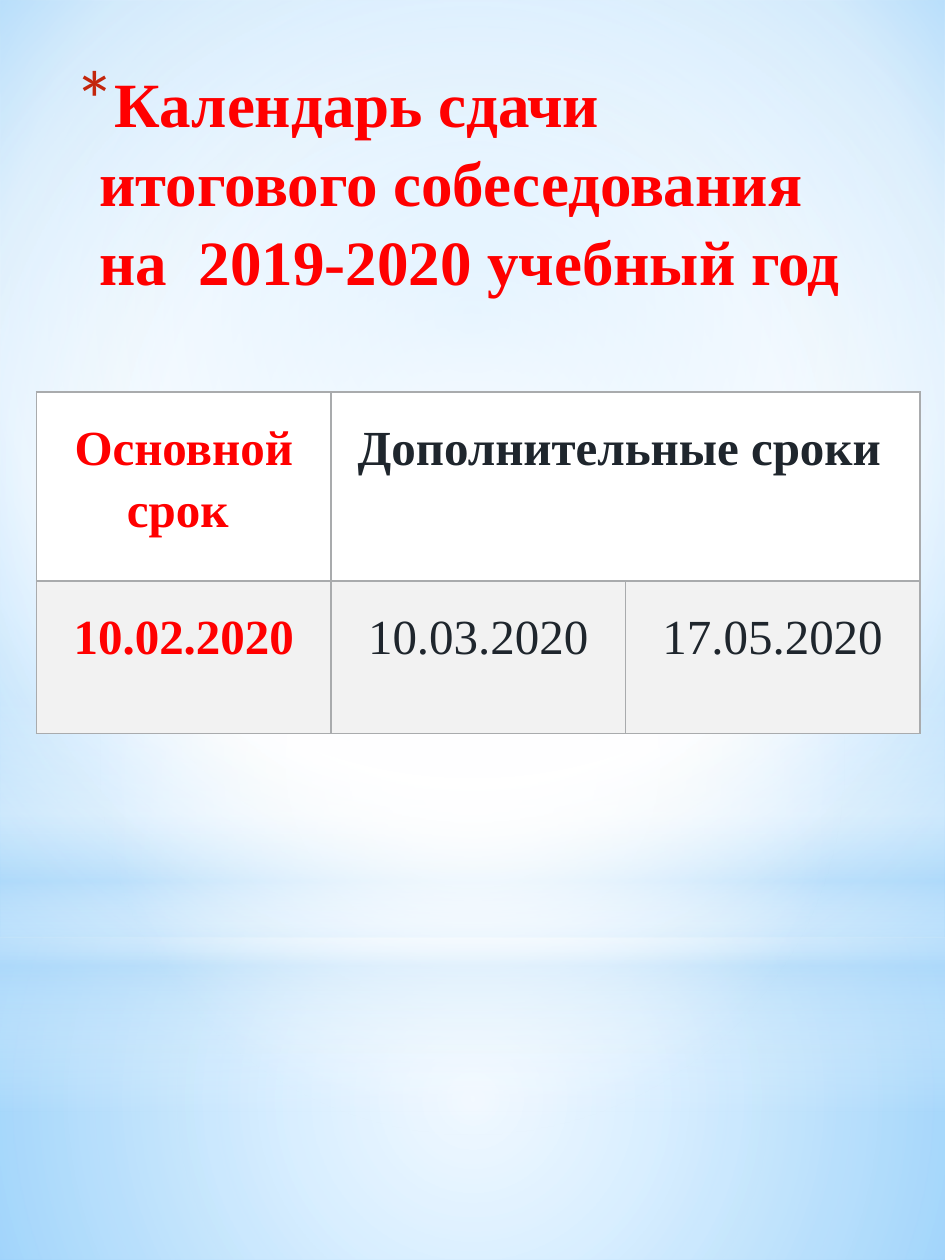
from dataclasses import dataclass

from lxml.etree import SubElement
from pptx import Presentation
from pptx.dml.color import RGBColor
from pptx.enum.shapes import MSO_SHAPE
from pptx.enum.text import PP_ALIGN
from pptx.oxml.ns import qn
from pptx.slide import Slide
from pptx.table import _Cell
from pptx.text.text import _Paragraph
from pptx.util import Inches, Pt

RED = RGBColor(0xFF, 0x00, 0x00)
RUST = RGBColor(0xC3, 0x26, 0x0C)
INK = RGBColor(0x1F, 0x26, 0x2D)
WHITE = RGBColor(0xFF, 0xFF, 0xFF)
PALE = RGBColor(0xF2, 0xF2, 0xF2)
GRAY = RGBColor(0xA9, 0xAB, 0xAD)
SKY = RGBColor(0xB4, 0xDC, 0xFA)
LIGHT = RGBColor(0x9E, 0xD5, 0xFF)
BLUE = RGBColor(0x5B, 0xB9, 0xFF)
FONT = "Times New Roman"
MIDDLE = (50, 50, 50, 50)


@dataclass
class Stop:
    place: int
    color: RGBColor
    alpha: int = 100


@dataclass
class Glow:
    kind: MSO_SHAPE
    top: float
    height: float
    stops: list[Stop]
    focus: tuple | None = MIDDLE


@dataclass
class Entry:
    row: int
    col: int
    text: str
    color: RGBColor
    bold: bool
    fill: RGBColor


GLOWS = [
    Glow(MSO_SHAPE.RECTANGLE, 7.44, 2.56,
         [Stop(0, WHITE, 91), Stop(37, WHITE, 76), Stop(100, SKY, 79)]),
    Glow(MSO_SHAPE.RECTANGLE, 0, 7.44,
         [Stop(0, WHITE, 89), Stop(48, WHITE, 62), Stop(100, SKY, 79)]),
    Glow(MSO_SHAPE.RECTANGLE, 5.49, 3.33,
         [Stop(0, WHITE, 0), Stop(29, WHITE, 30), Stop(45, SKY, 40),
          Stop(55, WHITE, 26), Stop(65, SKY, 60), Stop(100, WHITE, 0)], None),
    Glow(MSO_SHAPE.OVAL, 2.33, 7.44, [Stop(0, WHITE), Stop(56, WHITE, 0)]),
]

ENTRIES = [
    Entry(0, 0, "Основной срок ", RED, True, WHITE),
    Entry(0, 1, "Дополнительные сроки ", INK, True, WHITE),
    Entry(1, 0, "10.02.2020", RED, True, PALE),
    Entry(1, 1, "10.03.2020", INK, False, PALE),
    Entry(1, 2, "17.05.2020", INK, False, PALE),
]


def blend(owner, stops: list[Stop], focus: tuple | None) -> None:
    grad = next(owner.iter(qn("a:gradFill")))
    for child in list(grad):
        grad.remove(child)
    group = SubElement(grad, qn("a:gsLst"))
    for stop in stops:
        item = SubElement(group, qn("a:gs"), pos=str(stop.place * 1000))
        color = SubElement(item, qn("a:srgbClr"), val=str(stop.color))
        if stop.alpha < 100:
            SubElement(color, qn("a:alpha"), val=str(stop.alpha * 1000))
    if focus is None:
        SubElement(grad, qn("a:lin"), ang="5400000", scaled="0")
        return
    shade = SubElement(grad, qn("a:path"), path="circle")
    sides = {side: str(part * 1000) for side, part in zip("ltrb", focus)}
    SubElement(shade, qn("a:fillToRect"), **sides)


def draw_glow(slide: Slide, glow: Glow) -> None:
    shape = slide.shapes.add_shape(glow.kind, 0, Inches(glow.top),
                                   Inches(7.5), Inches(glow.height))
    shape.shadow.inherit = False
    shape.line.fill.background()
    shape.fill.gradient()
    blend(shape.element, glow.stops, glow.focus)


def style(para: _Paragraph, size: int, color: RGBColor, bold: bool) -> None:
    for run in para.runs:
        run.font.name = FONT
        run.font.size = Pt(size)
        run.font.bold = bold
        run.font.color.rgb = color


def draw_title(slide: Slide) -> None:
    box = slide.shapes.add_textbox(Inches(0.44), Inches(0.43),
                                   Inches(6.54), Inches(2.52))
    frame = box.text_frame
    frame.word_wrap = True
    frame.text = "Календарь сдачи итогового собеседования на  2019-2020 учебный год"
    para = frame.paragraphs[0]
    para.line_spacing = 1.05
    para.space_before = Pt(7)
    para.space_after = Pt(3)
    style(para, 36, RED, True)
    props = para._p.get_or_add_pPr()
    props.set("marL", str(Inches(0.25)))
    props.set("indent", str(Inches(-0.2)))
    tint = SubElement(props, qn("a:buClr"))
    SubElement(tint, qn("a:srgbClr"), val=str(RUST))
    SubElement(props, qn("a:buSzPct"), val="130000")
    SubElement(props, qn("a:buFont"), typeface="+mj-lt")
    SubElement(props, qn("a:buChar"), char="*")


def frame_cell(cell: _Cell, fill: RGBColor) -> None:
    props = cell._tc.get_or_add_tcPr()
    for side in ("lnL", "lnR", "lnT", "lnB"):
        line = SubElement(props, qn(f"a:{side}"), w=str(Pt(1)))
        solid = SubElement(line, qn("a:solidFill"))
        SubElement(solid, qn("a:srgbClr"), val=str(GRAY))
    cell.fill.solid()
    cell.fill.fore_color.rgb = fill


def draw_table(slide: Slide) -> None:
    table = slide.shapes.add_table(2, 3, Inches(0.29), Inches(3.11),
                                   Inches(7.01), Inches(2.71)).table
    table.first_row = False
    table.horz_banding = False
    for col in table.columns:
        col.width = Inches(7.01 / 3)
    for row, height, fill in zip(table.rows, (1.5, 1.21), (WHITE, PALE)):
        row.height = Inches(height)
        for cell in row.cells:
            frame_cell(cell, fill)
    table.cell(0, 1).merge(table.cell(0, 2))
    for entry in ENTRIES:
        cell = table.cell(entry.row, entry.col)
        cell.margin_left = cell.margin_right = Inches(0.2)
        cell.margin_top = cell.margin_bottom = Inches(0.17)
        cell.text_frame.text = entry.text
        para = cell.text_frame.paragraphs[0]
        para.alignment = PP_ALIGN.CENTER
        para.line_spacing = 1.15
        style(para, 28, entry.color, entry.bold)


def main() -> None:
    deck = Presentation()
    deck.slide_width = Inches(7.5)
    deck.slide_height = Inches(10)
    slide = deck.slides.add_slide(deck.slide_layouts[6])
    slide.background.fill.gradient()
    blend(slide.element, [Stop(0, LIGHT), Stop(60, WHITE), Stop(100, BLUE)],
          (20, 10, 20, 60))
    for glow in GLOWS:
        draw_glow(slide, glow)
    draw_title(slide)
    draw_table(slide)
    deck.save("out.pptx")


if __name__ == "__main__":
    main()
